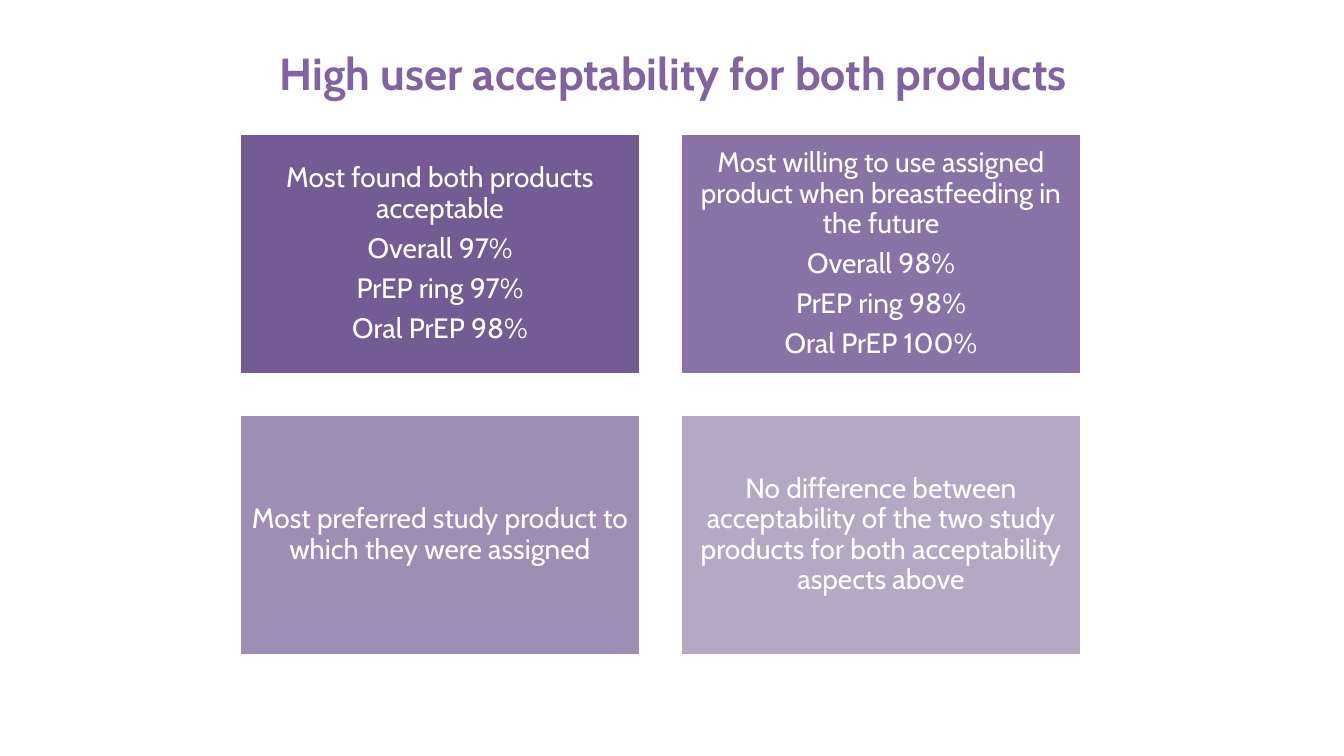
"""Build the slide on user acceptability of both products."""
from pptx import Presentation
from pptx.dml.color import RGBColor as RGB
from pptx.enum.shapes import MSO_SHAPE as SHAPE
from pptx.enum.text import MSO_ANCHOR as ANCHOR, MSO_AUTO_SIZE as AUTO, PP_ALIGN as ALIGN
from pptx.util import Emu, Pt

WHITE = RGB(0xFF, 0xFF, 0xFF)
PURPLE = RGB(0x80, 0x64, 0xA2)
DEEP = RGB(0x74, 0x5B, 0x93)
MID = RGB(0x89, 0x73, 0xA6)
SOFT = RGB(0x9E, 0x8E, 0xB5)
PALE = RGB(0xB4, 0xA9, 0xC5)

SCALE = 914400 / 100.8
LEFT, TOP = 240, 134
WIDTH, HEIGHT = 400, 240
STEP_X, STEP_Y = 441, 281
COLS = 2

CARDS = [
    (DEEP, ["Most found both products acceptable",
            "Overall 97%", "PrEP ring 97%", "Oral PrEP 98%"]),
    (MID, ["Most willing to use assigned product when breastfeeding in the future",
           "Overall 98%", "PrEP ring 98%", "Oral PrEP 100%"]),
    (SOFT, ["Most preferred study product to which they were assigned"]),
    (PALE, ["No difference between acceptability of the two study products "
            "for both acceptability aspects above"]),
]


def px(size):
    return Emu(round(size * SCALE))


def apply(item, style):
    for name, value in style.items():
        setattr(item, name, value)


class Deck:
    HEAD = {"name": "Cabin", "size": Pt(32), "bold": True}
    BODY = {"name": "Cabin", "size": Pt(20)}
    HEAD_PARA = {"alignment": ALIGN.CENTER, "line_spacing": Pt(28.5)}
    BODY_PARA = {"alignment": ALIGN.CENTER, "line_spacing": 0.9, "space_after": Pt(7)}
    HEAD_FRAME = {"vertical_anchor": ANCHOR.TOP, "word_wrap": True, "auto_size": AUTO.NONE}
    BODY_FRAME = {"vertical_anchor": ANCHOR.MIDDLE, "word_wrap": True,
                  "margin_left": px(8), "margin_top": px(8),
                  "margin_right": px(8), "margin_bottom": px(8)}

    def __init__(self, width, height):
        self.file = Presentation()
        apply(self.file, {"slide_width": px(width), "slide_height": px(height)})
        self.slide = self.file.slides.add_slide(self.file.slide_layouts[5])

    def words(self, frame, lines, para, font, color):
        frame.text = "\n".join(lines)
        for line in frame.paragraphs:
            apply(line, para)
            apply(line.font, font)
            line.font.color.rgb = color

    def title(self, text, left, top, width, height):
        box = self.slide.shapes.title
        apply(box, {"left": px(left), "top": px(top),
                    "width": px(width), "height": px(height)})
        apply(box.text_frame, self.HEAD_FRAME)
        self.words(box.text_frame, [text], self.HEAD_PARA, self.HEAD, PURPLE)

    def card(self, fill, lines, left, top):
        box = self.slide.shapes.add_shape(
            SHAPE.RECTANGLE, px(left), px(top), px(WIDTH), px(HEIGHT))
        box.shadow.inherit = False
        box.fill.solid()
        box.fill.fore_color.rgb = fill
        box.line.color.rgb = WHITE
        box.line.width = Pt(2)
        apply(box.text_frame, self.BODY_FRAME)
        self.words(box.text_frame, lines, self.BODY_PARA, self.BODY, WHITE)


def main():
    deck = Deck(1344, 756)
    deck.title("High user acceptability for both products", 196, 55, 955, 116)
    for index, (fill, lines) in enumerate(CARDS):
        row, col = divmod(index, COLS)
        deck.card(fill, lines, LEFT + col * STEP_X, TOP + row * STEP_Y)
    deck.file.save("out.pptx")


if __name__ == "__main__":
    main()
